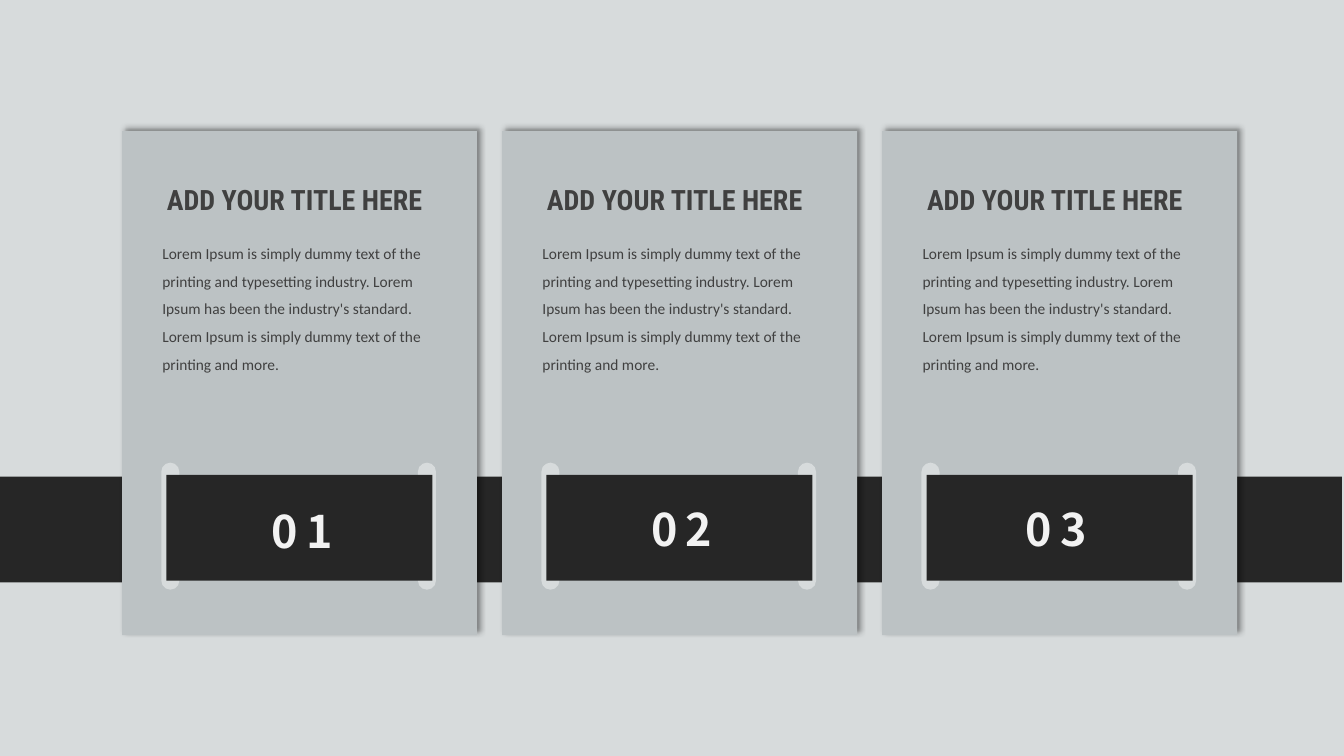
from dataclasses import dataclass

from lxml.etree import SubElement
from pptx import Presentation
from pptx.dml.color import RGBColor
from pptx.enum.shapes import MSO_SHAPE as SHAPE
from pptx.enum.text import MSO_AUTO_SIZE as AUTO, PP_ALIGN as ALIGN
from pptx.oxml.ns import qn
from pptx.util import Inches, Pt

COLS, ROWS = 64, 36
CARD_LEFT, CARD_PITCH = 5.81, 18.1
TITLE = "ADD YOUR TITLE HERE"
BODY = (
    "Lorem Ipsum is simply dummy text of the printing and typesetting industry. "
    "Lorem Ipsum has been the industry's standard. "
    "Lorem Ipsum is simply dummy text of the printing and more."
)
CARDS = [("01", 5, 23.76), ("02", 4.95, 23.66), ("03", 4.7, 23.66)]


@dataclass(frozen=True)
class Theme:
    page: str = "D7DBDC"
    card: str = "BCC2C4"
    dark: str = "262626"
    text: str = "404040"
    light: str = "F2F2F2"
    title_font: str = "Roboto Condensed"
    body_font: str = "Calibri"
    number_font: str = "Noto Sans CJK JP"
    title_size: int = 20
    body_size: int = 11
    number_size: int = 32


class Deck:
    def __init__(self, theme):
        self.theme = theme
        self.prs = Presentation()
        self.prs.slide_width = Inches(13.33)
        self.prs.slide_height = Inches(7.5)
        self.slide = self.prs.slides.add_slide(self.prs.slide_layouts[6])
        fill = self.slide.background.fill
        fill.solid()
        fill.fore_color.rgb = RGBColor.from_string(theme.page)

    def place(self, x, y, w, h):
        col, row = self.prs.slide_width / COLS, self.prs.slide_height / ROWS
        return [round(v) for v in (x * col, y * row, w * col, h * row)]

    def block(self, shapes, box, color, kind=SHAPE.RECTANGLE, radius=None):
        sp = shapes.add_shape(kind, *self.place(*box))
        sp.shadow.inherit = False
        sp.fill.solid()
        sp.fill.fore_color.rgb = RGBColor.from_string(color)
        sp.line.fill.background()
        if radius is not None:
            sp.adjustments[0] = radius
        return sp

    def cast_shadow(self, sp):
        effects = sp.element.spPr.find(qn("a:effectLst"))
        shadow = SubElement(effects, qn("a:outerShdw"), blurRad=str(Pt(4)), dist=str(Pt(3)),
                            dir=str(315 * 60000), algn="bl", rotWithShape="0")
        black = SubElement(shadow, qn("a:srgbClr"), val="000000")
        SubElement(black, qn("a:alpha"), val="40000")

    def text(self, shapes, box, words, font, size, color, bold=False, align=ALIGN.LEFT):
        tf = shapes.add_textbox(*self.place(*box)).text_frame
        tf.word_wrap = True
        tf.margin_left = tf.margin_right = tf.margin_top = tf.margin_bottom = 0
        p = tf.paragraphs[0]
        p.text = words
        p.alignment = align
        p.font.name, p.font.size, p.font.bold = font, Pt(size), bold
        p.font.color.rgb = RGBColor.from_string(color)
        return tf

    def number(self, shapes, box, words):
        t = self.theme
        tf = self.text(shapes, box, words, t.number_font, t.number_size, t.light, True, ALIGN.CENTER)
        tf.margin_left = tf.margin_right = Inches(0.1)
        tf.margin_top = tf.margin_bottom = Inches(0.05)
        tf.auto_size = AUTO.SHAPE_TO_FIT_TEXT
        tf.paragraphs[0].runs[0].font._element.set("spc", "600")

    def card(self, x, label, label_x, label_y):
        t = self.theme
        shapes = self.slide.shapes.add_group_shape().shapes
        panel = self.block(shapes, (x, 6.24, 16.9, 24), t.card, SHAPE.ROUNDED_RECTANGLE, 0)
        self.cast_shadow(panel)
        for clip_x in (1.87, 14.09):
            self.block(shapes, (x + clip_x, 22.03, 0.86, 6.05), t.page, SHAPE.ROUNDED_RECTANGLE, 0.5)
        self.block(shapes, (x + 2.11, 22.61, 12.67, 5.04), t.dark)
        self.number(shapes, (x + label_x, label_y, 7.2, 3.02), label)
        body = self.text(shapes, (x + 1.92, 11.18, 12.86, 10.51), BODY, t.body_font, t.body_size, t.text)
        body.paragraphs[0].line_spacing = 1.5
        self.text(shapes, (x + 1.5, 8.69, 13.44, 2.4), TITLE, t.title_font, t.title_size, t.text,
                  True, ALIGN.CENTER)


def main():
    deck = Deck(Theme())
    deck.block(deck.slide.shapes, (0, 22.7, 63.9, 5.04), deck.theme.dark)
    for i, (label, label_x, label_y) in enumerate(CARDS):
        deck.card(CARD_LEFT + i * CARD_PITCH, label, label_x, label_y)
    deck.prs.save("out.pptx")


if __name__ == "__main__":
    main()
